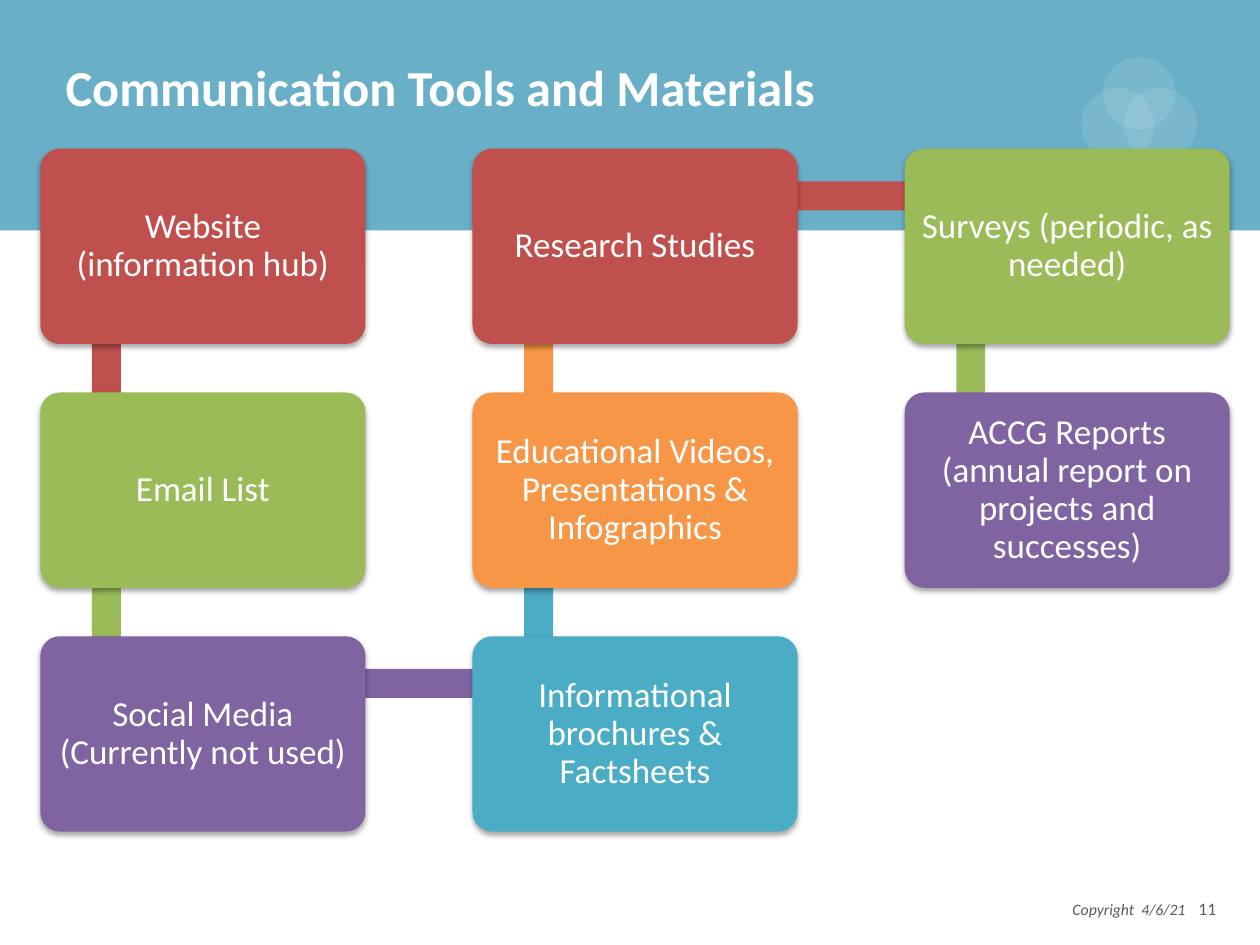
from itertools import pairwise

from lxml import etree
from pptx import Presentation
from pptx import util as u
from pptx.dml.color import RGBColor
from pptx.enum import shapes, text
from pptx.oxml import parse_xml
from pptx.oxml.ns import nsdecls, qn

FONT = "Calibri"
WHITE = RGBColor(0xFF, 0xFF, 0xFF)
GRAY = RGBColor(0x59, 0x59, 0x59)
BAND = RGBColor(0x69, 0xAF, 0xC7)
RED = RGBColor(0xC0, 0x50, 0x4D)
GREEN = RGBColor(0x9B, 0xBB, 0x59)
PURPLE = RGBColor(0x80, 0x64, 0xA2)
TEAL = RGBColor(0x4B, 0xAC, 0xC6)
ORANGE = RGBColor(0xF7, 0x96, 0x46)

BOX_W, BOX_H = 2.58, 1.55
COL_STEP, ROW_STEP = 3.43, 1.935
BAR = 0.23

TOOLS = [
    ("Website (information hub)", RED, 0, 0),
    ("Email List", GREEN, 0, 1),
    ("Social Media (Currently not used)", PURPLE, 0, 2),
    ("Informational brochures & Factsheets", TEAL, 1, 2),
    ("Educational Videos, Presentations & Infographics", ORANGE, 1, 1),
    ("Research Studies", RED, 1, 0),
    ("Surveys (periodic, as needed)", GREEN, 2, 0),
    ("ACCG Reports (annual report on projects and successes)", PURPLE, 2, 1),
]


def add_block(s, kind, x, y, w, h, color):
    sp = s.shapes.add_shape(kind, u.Inches(x), u.Inches(y), u.Inches(w), u.Inches(h))
    sp.shadow.inherit = False
    sp.fill.solid()
    sp.fill.fore_color.rgb = color
    sp.line.fill.background()
    return sp


def style_run(r, size, color, bold=False, italic=False):
    r.font.name = FONT
    r.font.size = u.Pt(size)
    r.font.color.rgb = color
    r.font.bold = bold
    r.font.italic = italic


def add_soft_shadow(sp):
    effects = sp._element.spPr.find(qn("a:effectLst"))
    effects.append(parse_xml(
        f'<a:outerShdw {nsdecls("a")} blurRad="{u.Pt(3.1)}" dist="{u.Pt(1.8)}" '
        'dir="5400000" rotWithShape="0"><a:srgbClr val="000000">'
        '<a:alpha val="35000"/></a:srgbClr></a:outerShdw>'))


def add_header(s, x, y, w, h):
    add_block(s, shapes.MSO_SHAPE.RECTANGLE, x, y, w, h, BAND)
    for dx, dy in [(8.58, 0.7), (8.92, 0.7), (8.75, 0.45)]:
        sp = add_block(s, shapes.MSO_SHAPE.OVAL, x + dx, y + dy, 0.58, 0.58, WHITE)
        color = sp._element.spPr.find(f'{qn("a:solidFill")}/{qn("a:srgbClr")}')
        etree.SubElement(color, qn("a:alpha")).set("val", "10000")


def add_title(s, x, y, w, h):
    title = s.shapes.title
    s.shapes._spTree.append(title._element)
    title.left, title.top = u.Inches(x), u.Inches(y)
    title.width, title.height = u.Inches(w), u.Inches(h)
    tf = title.text_frame
    tf.text = "Communication Tools and Materials"
    tf.vertical_anchor = text.MSO_ANCHOR.MIDDLE
    tf.auto_size = text.MSO_AUTO_SIZE.NONE
    p = tf.paragraphs[0]
    p.alignment = text.PP_ALIGN.LEFT
    style_run(p.runs[0], 28.8, WHITE, bold=True)


def add_link(s, x, y, start, end, color):
    (c1, r1), (c2, r2) = start, end
    left = x + min(c1, c2) * COL_STEP
    top = y + min(r1, r2) * ROW_STEP
    if c1 == c2:
        place = left + 0.41, top + 0.39, BAR, ROW_STEP
    else:
        place = left + 0.53, top + 0.26, COL_STEP, BAR
    add_block(s, shapes.MSO_SHAPE.RECTANGLE, *place, color)


def add_tool(s, x, y, label, color):
    sp = add_block(s, shapes.MSO_SHAPE.ROUNDED_RECTANGLE, x, y, BOX_W, BOX_H, color)
    sp.adjustments[0] = 0.1
    add_soft_shadow(sp)
    tf = sp.text_frame
    tf.word_wrap = True
    tf.vertical_anchor = text.MSO_ANCHOR.MIDDLE
    tf.margin_left = tf.margin_right = u.Inches(0.09)
    tf.margin_top = tf.margin_bottom = u.Inches(0.09)
    tf.text = label
    p = tf.paragraphs[0]
    p.alignment = text.PP_ALIGN.CENTER
    p.line_spacing = 0.9
    style_run(p.runs[0], 20, WHITE)


def add_flow(s, x, y):
    for (_, color, *start), (_, _, *end) in pairwise(TOOLS):
        add_link(s, x, y, start, end, color)
    for label, color, col, row in TOOLS:
        add_tool(s, x + col * COL_STEP, y + row * ROW_STEP, label, color)


def add_footer(s, x, y, w, h):
    sp = s.shapes.add_textbox(u.Inches(x), u.Inches(y), u.Inches(w), u.Inches(h))
    tf = sp.text_frame
    tf.word_wrap = True
    p = tf.paragraphs[0]
    p.alignment = text.PP_ALIGN.RIGHT
    for words, size, italic in [("Copyright  4/6/21", 9, True), ("\t11", 10, False)]:
        r = p.add_run()
        r.text = words
        style_run(r, size, GRAY, italic=italic)


def main():
    prs = Presentation()
    prs.slide_width, prs.slide_height = u.Inches(10), u.Inches(7.5)
    s = prs.slides.add_slide(prs.slide_layouts[5])
    add_header(s, 0, 0, 10, 1.83)
    add_footer(s, 5.67, 7.08, 4.08, 0.4)
    add_title(s, 0.42, 0.42, 7.67, 0.53)
    add_flow(s, 0.32, 1.18)
    prs.save("out.pptx")


if __name__ == "__main__":
    main()
